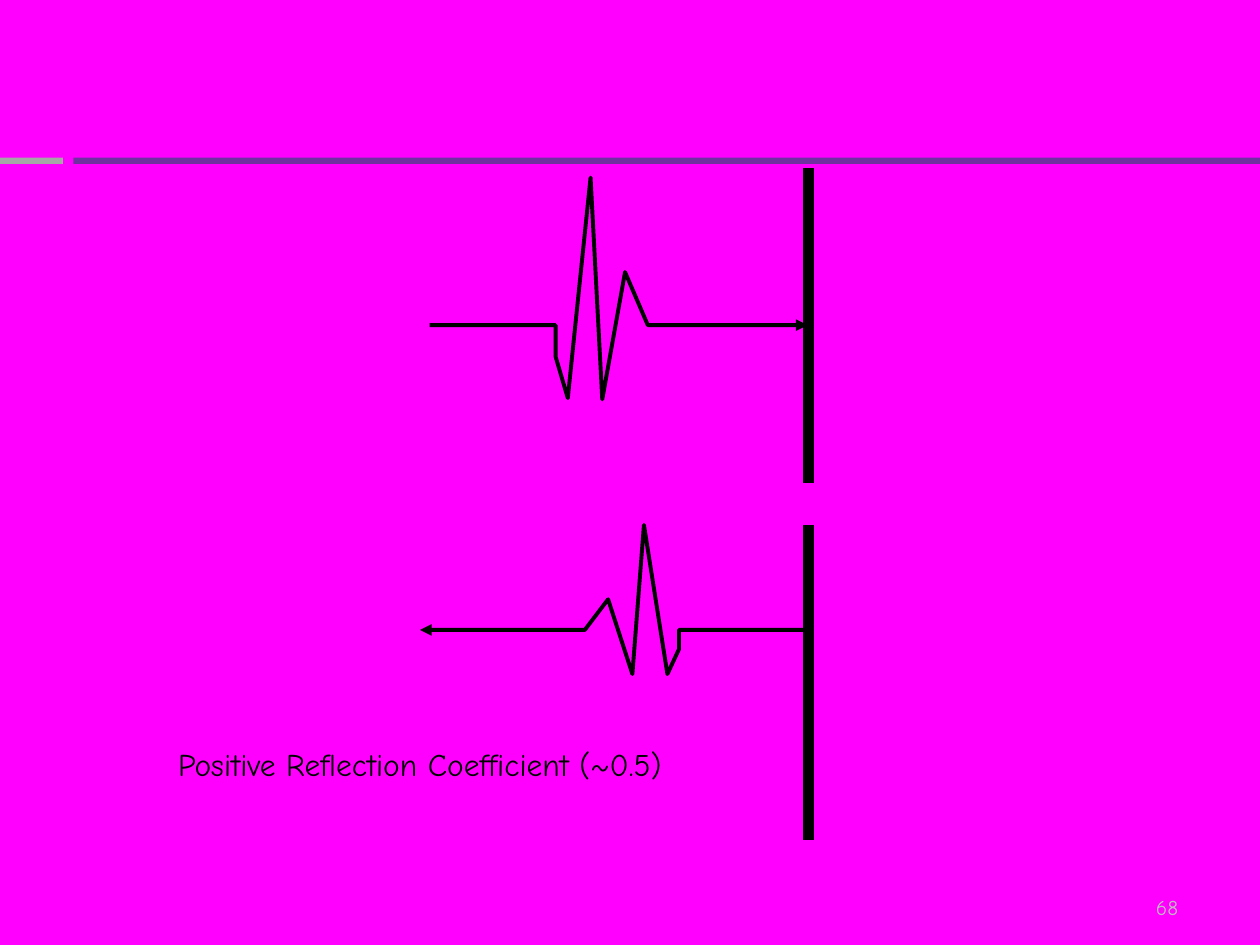
from lxml.etree import SubElement
from pptx import Presentation
from pptx.dml.color import RGBColor
from pptx.enum.shapes import MSO_CONNECTOR, MSO_SHAPE
from pptx.enum.text import MSO_ANCHOR, PP_ALIGN
from pptx.oxml.ns import qn
from pptx.util import Pt

MAGENTA = RGBColor(0xFF, 0x00, 0xFF)
PURPLE = RGBColor(0x70, 0x30, 0xA0)
GRAY = RGBColor(0xA6, 0xA6, 0xA6)
LIGHT_GRAY = RGBColor(0xBF, 0xBF, 0xBF)
BLACK = RGBColor(0x00, 0x00, 0x00)

WALL_X = 462
WALL_HEIGHT = 180
WALL_TOPS = (96, 300)

INCOMING_PULSE = [
    (245.5, 185.8), (317.5, 185.8), (317.5, 203.8), (324.5, 227.5),
    (337.5, 101.5), (344.2, 228.2), (357.2, 155.5), (370.2, 185.8),
    (461.5, 185.8),
]
REFLECTED_PULSE = [
    (462, 360), (388, 360), (388, 371), (381.4, 385.2), (368, 300),
    (361.4, 385.2), (347.5, 342.5), (334.2, 360), (240, 360),
]


class SlideBuilder:
    """Draws elements on one slide; all lengths are in points."""

    def __init__(self, slide, font="Comic Neue", pulse_width=2.25, wall_width=6):
        self.slide = slide
        self.font = font
        self.pulse_width = pulse_width
        self.wall_width = wall_width

    def background(self, color):
        fill = self.slide.background.fill
        fill.solid()
        fill.fore_color.rgb = color

    def bar(self, left, top, width, height, color):
        shape = self.slide.shapes.add_shape(
            MSO_SHAPE.RECTANGLE, Pt(left), Pt(top), Pt(width), Pt(height))
        shape.shadow.inherit = False
        shape.fill.solid()
        shape.fill.fore_color.rgb = color
        shape.line.fill.background()

    def text(self, left, top, width, height, words, size, color,
             align=PP_ALIGN.CENTER, anchor=MSO_ANCHOR.TOP, right_margin=7.2):
        box = self.slide.shapes.add_textbox(
            Pt(left), Pt(top), Pt(width), Pt(height))
        frame = box.text_frame
        frame.word_wrap = True
        frame.vertical_anchor = anchor
        frame.margin_right = Pt(right_margin)
        frame.text = words
        paragraph = frame.paragraphs[0]
        paragraph.alignment = align
        font = paragraph.runs[0].font
        font.name = self.font
        font.size = Pt(size)
        font.color.rgb = color

    def pulse(self, points):
        start, *rest = [(Pt(x), Pt(y)) for x, y in points]
        builder = self.slide.shapes.build_freeform(*start)
        builder.add_line_segments(rest, close=False)
        shape = builder.convert_to_shape()
        shape.shadow.inherit = False
        shape.fill.background()
        shape.line.color.rgb = BLACK
        shape.line.width = Pt(self.pulse_width)
        line = shape.line._get_or_add_ln()
        SubElement(line, qn("a:round"))
        SubElement(line, qn("a:tailEnd"), type="triangle")

    def wall(self, x, top, height):
        connector = self.slide.shapes.add_connector(
            MSO_CONNECTOR.STRAIGHT, Pt(x), Pt(top), Pt(x), Pt(top + height))
        connector.line.color.rgb = BLACK
        connector.line.width = Pt(self.wall_width)
        SubElement(connector._element.spPr, qn("a:effectLst"))


def main():
    presentation = Presentation()
    presentation.slide_width = Pt(720)
    presentation.slide_height = Pt(540)
    slide = presentation.slides.add_slide(presentation.slide_layouts[6])
    builder = SlideBuilder(slide)

    # Background, header bars and page number
    builder.background(MAGENTA)
    builder.text(516, 500.4, 168, 28.8, "68", 12, LIGHT_GRAY,
                 PP_ALIGN.RIGHT, MSO_ANCHOR.BOTTOM, right_margin=10.8)
    builder.bar(42, 90, 678, 3.6, PURPLE)
    builder.bar(0, 90, 36, 3.6, GRAY)

    # Caption
    builder.text(21, 422, 438, 28.8,
                 "Positive Reflection Coefficient (~0.5)", 18, BLACK)

    # Pulses before and after the reflection
    for points in (INCOMING_PULSE, REFLECTED_PULSE):
        builder.pulse(points)

    # Reflecting walls
    for top in WALL_TOPS:
        builder.wall(WALL_X, top, WALL_HEIGHT)

    presentation.save("out.pptx")


if __name__ == "__main__":
    main()
